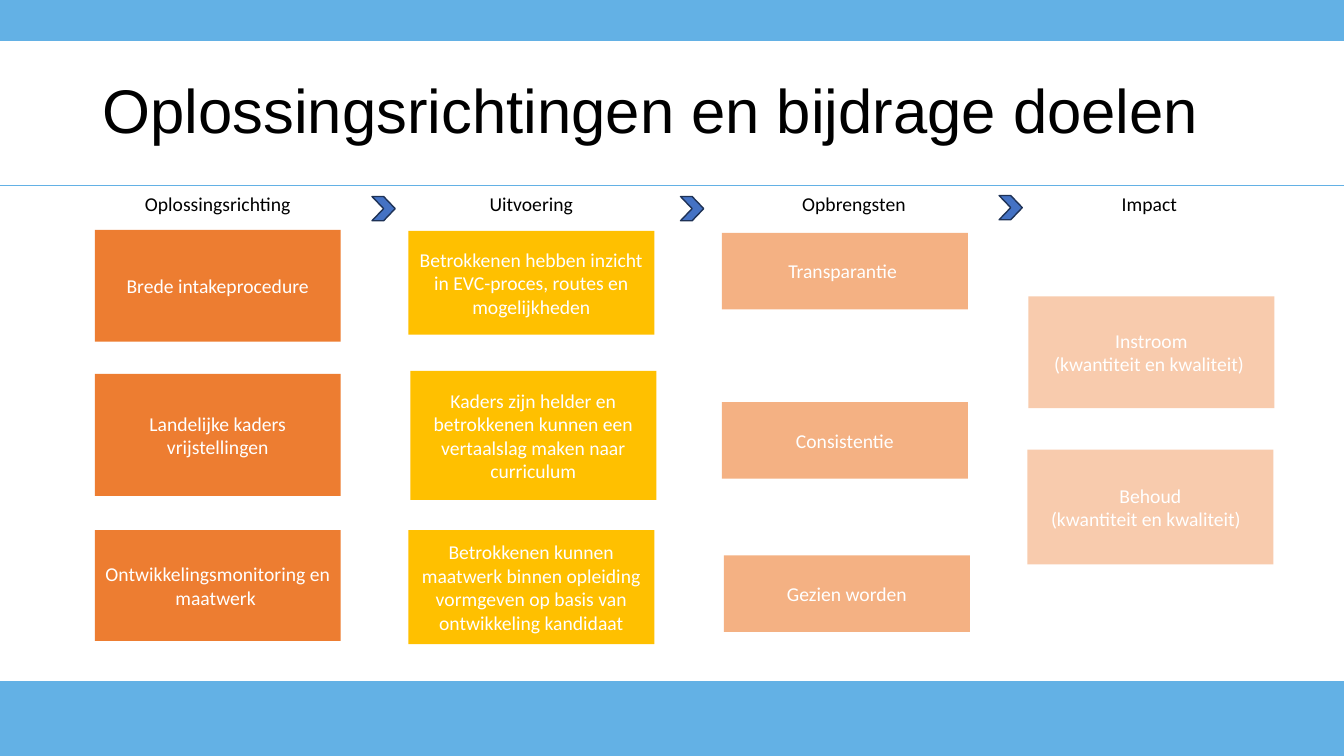
import pptx
import pptx.util
import pptx.dml.color
import pptx.enum.shapes
import pptx.enum.text
import pptx.oxml.ns
import lxml.etree

Inches = pptx.util.Inches
Pt = pptx.util.Pt
RGBColor = pptx.dml.color.RGBColor
SHAPE = pptx.enum.shapes.MSO_SHAPE
ALIGN = pptx.enum.text.PP_ALIGN
MIDDLE = pptx.enum.text.MSO_ANCHOR.MIDDLE

SKY = RGBColor(0x63, 0xB1, 0xE5)
BLACK = RGBColor(0, 0, 0)
WHITE = RGBColor(0xFF, 0xFF, 0xFF)
ORANGE = RGBColor(0xED, 0x7D, 0x31)
YELLOW = RGBColor(0xFF, 0xC0, 0x00)
PEACH = RGBColor(0xF4, 0xB1, 0x83)
PALE = RGBColor(0xF8, 0xCB, 0xAD)
BLUE = RGBColor(0x44, 0x72, 0xC4)
NAVY = RGBColor(0x1E, 0x32, 0x56)

WIDTH = 13.33
BOX_W = 2.44
HEAD_TOP = 1.85

# Heading, heading left, fill, boxes as (left, top, height, text)
COLUMNS = [
    ("Oplossingsrichting", 0.94, ORANGE, [
        (0.94, 2.28, 1.11, "Brede intakeprocedure"),
        (0.94, 3.71, 1.21, "Landelijke kaders vrijstellingen"),
        (0.94, 5.26, 1.1, "Ontwikkelingsmonitoring en maatwerk "),
    ]),
    ("Uitvoering", 4.05, YELLOW, [
        (4.05, 2.29, 1.03, "Betrokkenen hebben inzicht in EVC-proces, "
                           "routes en mogelijkheden"),
        (4.07, 3.68, 1.28, "Kaders zijn helder en betrokkenen kunnen een "
                           "vertaalslag maken naar curriculum"),
        (4.05, 5.26, 1.13, "Betrokkenen kunnen maatwerk binnen opleiding "
                           "vormgeven op basis van ontwikkeling kandidaat"),
    ]),
    ("Opbrengsten", 7.25, PEACH, [
        (7.16, 2.31, 0.76, "Transparantie "),
        (7.16, 3.99, 0.76, "Consistentie"),
        (7.18, 5.51, 0.76, "Gezien worden"),
    ]),
    ("Impact", 10.18, PALE, [
        (10.2, 2.94, 1.11, "Instroom\n(kwantiteit en kwaliteit) "),
        (10.19, 4.46, 1.14, "Behoud\n(kwantiteit en kwaliteit)  "),
    ]),
]
CHEVRONS = [(3.69, 1.95), (6.75, 1.95), (9.91, 1.94)]


def write(shape, text, color, size=14, font="Calibri", align=ALIGN.CENTER):
    frame = shape.text_frame
    frame.word_wrap = True
    frame.text = text
    for para in frame.paragraphs:
        para.alignment = align
        for run in para.runs:
            run.font.size = Pt(size)
            run.font.name = font
            run.font.color.rgb = color
    return frame


def add_label(slide, left, top, width, height):
    return slide.shapes.add_textbox(
        Inches(left), Inches(top), Inches(width), Inches(height))


def add_block(slide, kind, left, top, width, height, fill, edge=None):
    block = slide.shapes.add_shape(
        kind, Inches(left), Inches(top), Inches(width), Inches(height))
    block.shadow.inherit = False
    block.fill.solid()
    block.fill.fore_color.rgb = fill
    if edge is None:
        block.line.fill.background()
    else:
        block.line.color.rgb = edge
        block.line.width = Pt(1)
    return block


def add_rule(slide, top):
    rule = slide.shapes.add_connector(
        pptx.enum.shapes.MSO_CONNECTOR.STRAIGHT,
        Inches(WIDTH), Inches(top), Inches(0), Inches(top))
    rule.line.color.rgb = SKY
    rule.line.width = Pt(0.5)
    props = rule.element.find(pptx.oxml.ns.qn("p:spPr"))
    lxml.etree.SubElement(props, pptx.oxml.ns.qn("a:effectLst"))


def add_title(slide, text):
    title = add_label(slide, 0.92, 0.4, 11.5, 1.45)
    frame = write(title, text, BLACK, 44, "Arial", ALIGN.LEFT)
    frame.vertical_anchor = MIDDLE
    frame.paragraphs[0].line_spacing = 0.9


def add_column(slide, head, head_left, fill, boxes):
    write(add_label(slide, head_left, HEAD_TOP, BOX_W, 0.34), head, BLACK)
    for left, top, height, text in boxes:
        box = add_block(slide, SHAPE.RECTANGLE, left, top, BOX_W, height, fill)
        write(box, text, WHITE).vertical_anchor = MIDDLE


def main():
    deck = pptx.Presentation()
    deck.slide_width = Inches(WIDTH)
    deck.slide_height = Inches(7.5)
    slide = deck.slides.add_slide(deck.slide_layouts[6])

    add_title(slide, "Oplossingsrichtingen en bijdrage doelen")
    for top, height in [(0, 0.4), (6.76, 0.74)]:
        add_block(slide, SHAPE.RECTANGLE, 0, top, WIDTH, height, SKY, SKY)
    add_rule(slide, 1.84)
    for column in COLUMNS:
        add_column(slide, *column)
    for left, top in CHEVRONS:
        add_block(slide, SHAPE.CHEVRON, left, top, 0.23, 0.24, BLUE, NAVY)

    deck.save("out.pptx")


if __name__ == "__main__":
    main()
